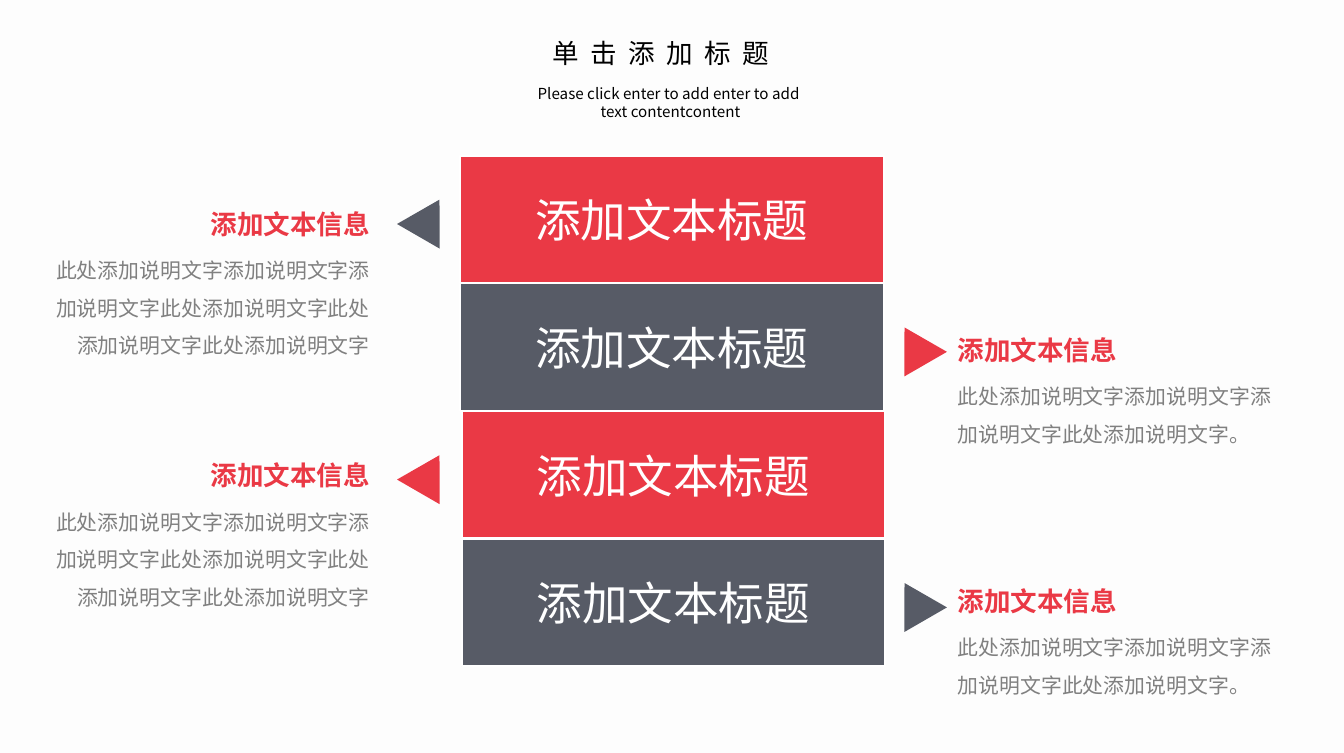
from lxml import etree
from pptx import Presentation
from pptx.dml.color import RGBColor
from pptx.enum.shapes import MSO_SHAPE
from pptx.enum.text import MSO_ANCHOR, MSO_AUTO_SIZE, PP_ALIGN
from pptx.oxml.ns import qn
from pptx.util import Inches, Pt

RECT, TRIANGLE = MSO_SHAPE.RECTANGLE, MSO_SHAPE.ISOSCELES_TRIANGLE
LEFT, CENTER, RIGHT = PP_ALIGN.LEFT, PP_ALIGN.CENTER, PP_ALIGN.RIGHT
MIDDLE, GROW = MSO_ANCHOR.MIDDLE, MSO_AUTO_SIZE.SHAPE_TO_FIT_TEXT
FONT = "Noto Sans CJK SC"
COLORS = {"bg": "FDFDFD", "red": "EA3945", "slate": "575B66",
          "white": "FFFFFF", "gray": "808080", "black": "000000"}
BAND_TITLE = "添加文本标题"
NOTE_TITLE = "添加文本信息"
LEFT_NOTE = "此处添加说明文字添加说明文字添加说明文字此处添加说明文字此处添加说明文字此处添加说明文字"
RIGHT_NOTE = "此处添加说明文字添加说明文字添加说明文字此处添加说明文字。"
BANDS = [("red", "slate"), ("slate", "red"), ("red", "red"), ("slate", "slate")]
BAND_STEP, NOTE_STEP = 0.935, 0.92


def rgb(name):
    """Return the named colour."""
    return RGBColor.from_string(COLORS[name])


def write(p, text, size, color, align, bold=False):
    """Fill a paragraph with one formatted run and return the run."""
    p.text = text
    p.alignment = align
    r = p.runs[0]
    r.font.size = Pt(size)
    r.font.bold = bold
    r.font.color.rgb = rgb(color)
    r.font.name = FONT
    etree.SubElement(r.font._element, qn("a:ea")).set("typeface", FONT)
    return r


def set_insets(tf):
    """Give a text frame the narrow margins used on this slide."""
    tf.margin_left = tf.margin_right = Inches(0.07)
    tf.margin_top = tf.margin_bottom = Inches(0.04)


def add_block(s, kind, box, color):
    """Add a plain filled shape without outline or shadow."""
    sp = s.shapes.add_shape(kind, *map(Inches, box))
    sp.shadow.inherit = False
    sp.fill.solid()
    sp.fill.fore_color.rgb = rgb(color)
    sp.line.fill.background()
    return sp


def add_band(s, x, y, color):
    """Add one titled band of the central stack."""
    sp = add_block(s, RECT, (x, y, 3.1, 0.93), color)
    sp.line.color.rgb = rgb("white")
    sp.line.width = Pt(1)
    tf = sp.text_frame
    tf.word_wrap = True
    tf.vertical_anchor = MIDDLE
    set_insets(tf)
    write(tf.paragraphs[0], BAND_TITLE, 24, "white", CENTER)


def add_pointer(s, x, y, color, rotation):
    """Add a triangle pointing from the stack to its note."""
    add_block(s, TRIANGLE, (x, y, 0.36, 0.31), color).rotation = rotation


def add_note(s, x, y, body, align):
    """Add a side note with a heading and a description."""
    tf = s.shapes.add_textbox(*map(Inches, (x, y, 2.59, 1.17))).text_frame
    tf.word_wrap = True
    set_insets(tf)
    write(tf.paragraphs[0], NOTE_TITLE, 14, "red", align, bold=True)
    p = tf.add_paragraph()
    p.line_spacing = 1.5
    p.space_before = Pt(3)
    write(p, body, 11, "gray", align)


def add_heading(s, x, y):
    """Add the slide title and its two-line subtitle."""
    tf = s.shapes.add_textbox(*map(Inches, (x + 0.16, y, 1.88, 0.34))).text_frame
    tf.word_wrap = False
    tf.auto_size = GROW
    r = write(tf.paragraphs[0], "单击添加标题", 14, "black", LEFT)
    r.font._element.set("spc", "600")
    tf = s.shapes.add_textbox(*map(Inches, (x, y + 0.35, 2.24, 0.37))).text_frame
    tf.word_wrap = False
    tf.auto_size = GROW
    write(tf.paragraphs[0], "Please click enter to add enter to add ", 8, "black", CENTER)
    write(tf.add_paragraph(), "text contentcontent", 8, "black", CENTER)


def add_stack(s, x, y):
    """Add the bands with pointers and notes on alternating sides."""
    for i, (band, pointer) in enumerate(BANDS):
        top = y + i * BAND_STEP
        note_top = y + 0.34 + i * NOTE_STEP
        add_band(s, x + i // 2 * 0.01, top, band)
        if i % 2 == 0:
            add_pointer(s, x - 0.41, top + 0.3, pointer, 30)
            add_note(s, x - 3.18, note_top, LEFT_NOTE, RIGHT)
        else:
            add_pointer(s, x + 3.15, top + 0.3, pointer, 330)
            add_note(s, x + 3.57, note_top, RIGHT_NOTE, LEFT)


def main():
    """Build the slide and save it."""
    prs = Presentation()
    prs.slide_width, prs.slide_height = Inches(9.84), Inches(5.51)
    s = prs.slides.add_slide(prs.slide_layouts[6])
    s.background.fill.solid()
    s.background.fill.fore_color.rgb = rgb("bg")
    add_stack(s, 3.37, 1.14)
    add_heading(s, 3.79, 0.22)
    prs.save("out.pptx")


if __name__ == "__main__":
    main()
